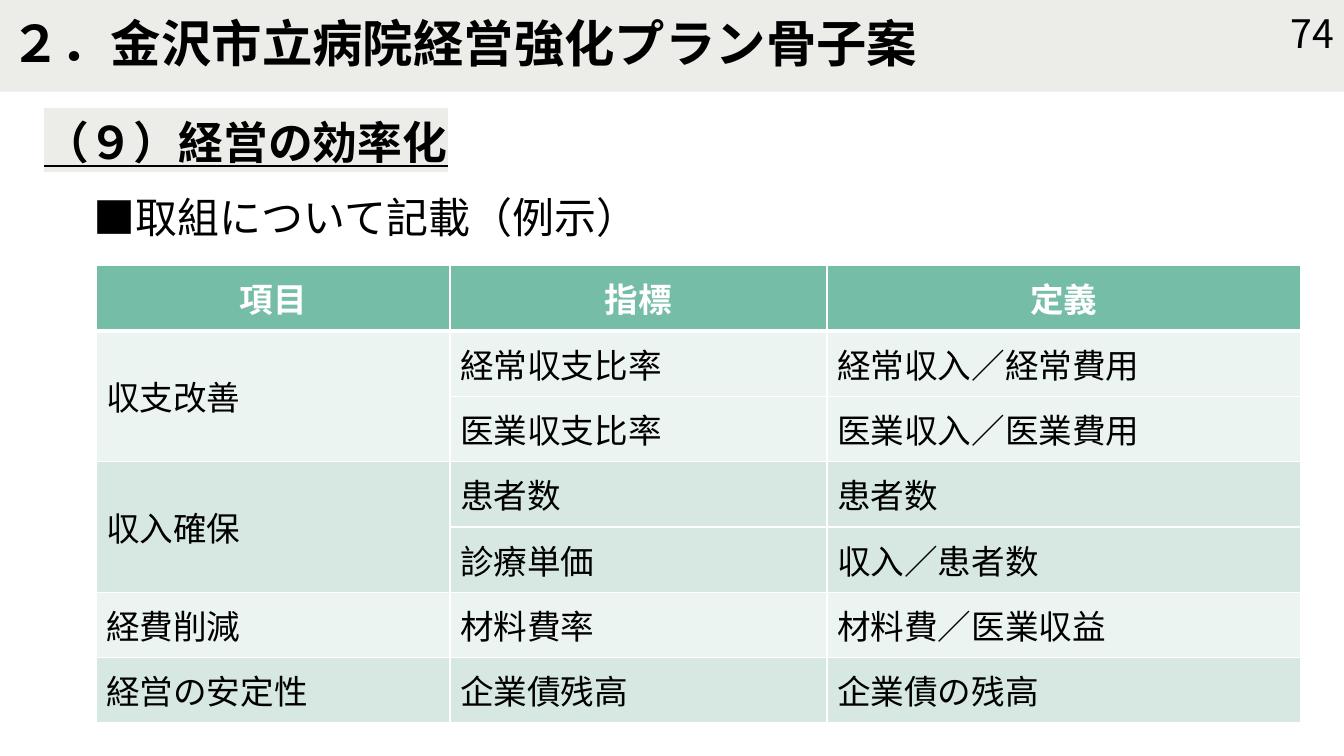
from dataclasses import dataclass

import pptx
import pptx.dml.color
import pptx.enum.text
import pptx.oxml
import pptx.oxml.ns
import pptx.util
from pptx.util import Cm

ALIGN = pptx.enum.text.PP_ALIGN
ANCHOR = pptx.enum.text.MSO_ANCHOR
AUTO_SIZE = pptx.enum.text.MSO_AUTO_SIZE


@dataclass(frozen=True)
class Theme:
    font: str = "Noto Sans CJK JP"
    ink: str = "000000"
    white: str = "FFFFFF"
    band: str = "ECEDE8"
    header: str = "75BDA7"
    row_tints: tuple = ("ECF4F1", "D6E8E1")
    title: int = 36
    heading: int = 32
    lead: int = 30
    page_number: int = 28
    cell: int = 24


THEME = Theme()

COLUMNS = {"項目": 8.92, "指標": 9.5, "定義": 11.94}
MEASURES = [
    ("収支改善", [("経常収支比率", "経常収入／経常費用"),
              ("医業収支比率", "医業収入／医業費用")]),
    ("収入確保", [("患者数", "患者数"), ("診療単価", "収入／患者数")]),
    ("経費削減", [("材料費率", "材料費／医業収益")]),
    ("経営の安定性", [("企業債残高", "企業債の残高")]),
]


def rgb(value):
    return pptx.dml.color.RGBColor.from_string(value)


def xml(markup):
    return pptx.oxml.parse_xml(
        markup.replace(" ", f" {pptx.oxml.ns.nsdecls('a')} ", 1))


def write(frame, text, size, color=THEME.ink, bold=False, underline=None,
          highlight=None, align=ALIGN.LEFT, spacing=None):
    para = frame.paragraphs[0]
    para.alignment = align
    para.line_spacing = spacing
    span = para.add_run()
    span.text = text
    font = span.font
    font.size = pptx.util.Pt(size)
    font.bold = bold
    font.underline = underline
    font.color.rgb = rgb(color)
    properties = span.font.fill._xPr
    if highlight:
        properties.append(xml(
            f'<a:highlight ><a:srgbClr val="{highlight}"/></a:highlight>'))
    for script in ("latin", "ea"):
        properties.append(xml(f'<a:{script} typeface="{THEME.font}"/>'))


def add_text(page, box, text, size, anchor=ANCHOR.TOP, **style):
    frame = page.shapes.add_textbox(*map(Cm, box)).text_frame
    frame.word_wrap = True
    frame.vertical_anchor = anchor
    write(frame, text, size, **style)


def add_title_band(page, box, text, number):
    left, top, width, height = box
    title = page.shapes.title
    title.left, title.top, title.width, title.height = map(Cm, box)
    title.fill.solid()
    title.fill.fore_color.rgb = rgb(THEME.band)
    frame = title.text_frame
    frame.auto_size = AUTO_SIZE.NONE
    frame.vertical_anchor = ANCHOR.MIDDLE
    write(frame, text, THEME.title, bold=True, spacing=0.9)
    number_width = 8.26
    add_text(page, (left + width - number_width, top + 0.33, number_width, 1.02),
             number, THEME.page_number, anchor=ANCHOR.MIDDLE, align=ALIGN.RIGHT)


def add_headings(page, box, heading, lead):
    left, top, width, height = box
    add_text(page, (left, top, width, 1.63), heading, THEME.heading, bold=True,
             underline=True, highlight=THEME.band, spacing=0.9)
    indent, drop = 1.25, 1.93
    add_text(page, (left + indent, top + drop, width - indent, height - drop),
             lead, THEME.lead, spacing=0.9)


def set_borders(cell, bottom):
    """Draw white cell edges; bottom is the lower edge's width in points."""
    properties = cell._tc.get_or_add_tcPr()
    widths = {"lnL": 1, "lnR": 1, "lnT": 1, "lnB": bottom}
    for index, (edge, width) in enumerate(widths.items()):
        properties.insert(index, xml(
            f'<a:{edge} w="{pptx.util.Pt(width)}"><a:solidFill>'
            f'<a:srgbClr val="{THEME.white}"/></a:solidFill></a:{edge}>'))


def style_cell(cell, fill, bottom=1):
    cell.fill.solid()
    cell.fill.fore_color.rgb = rgb(fill)
    cell.vertical_anchor = ANCHOR.MIDDLE
    set_borders(cell, bottom)


def add_measures_table(page, box):
    row_count = 1 + sum(len(entries) for _, entries in MEASURES)
    table = page.shapes.add_table(row_count, len(COLUMNS), *map(Cm, box)).table
    table.horz_banding = False
    for row in table.rows:
        row.height = Cm(box[3] / row_count)
    for index, (label, width) in enumerate(COLUMNS.items()):
        table.columns[index].width = Cm(width)
        cell = table.cell(0, index)
        style_cell(cell, THEME.header, bottom=3)
        write(cell.text_frame, label, THEME.cell, color=THEME.white, bold=True,
              align=ALIGN.CENTER)

    first = 1
    for group, (item, entries) in enumerate(MEASURES):
        tint = THEME.row_tints[group % 2]
        for row, entry in enumerate(entries, first):
            for column in range(len(COLUMNS)):
                style_cell(table.cell(row, column), tint)
            for column, text in enumerate(entry, 1):
                write(table.cell(row, column).text_frame, text, THEME.cell)
        item_cell = table.cell(first, 0)
        write(item_cell.text_frame, item, THEME.cell)
        if len(entries) > 1:
            item_cell.merge(table.cell(first + len(entries) - 1, 0))
        first += len(entries)


def main():
    deck = pptx.Presentation()
    deck.slide_width, deck.slide_height = Cm(33.87), Cm(19.05)
    page = deck.slides.add_slide(deck.slide_layouts.get_by_name("Title Only"))
    add_title_band(page, (0, 0, 33.87, 2.31),
                   "２．金沢市立病院経営強化プラン骨子案", "74")
    add_headings(page, (0.86, 2.92, 32.6, 3.48),
                 "（９）経営の効率化", "■取組について記載（例示）")
    add_measures_table(page, (2.42, 6.69, sum(COLUMNS.values()), 11.53))
    deck.save("out.pptx")


if __name__ == "__main__":
    main()
